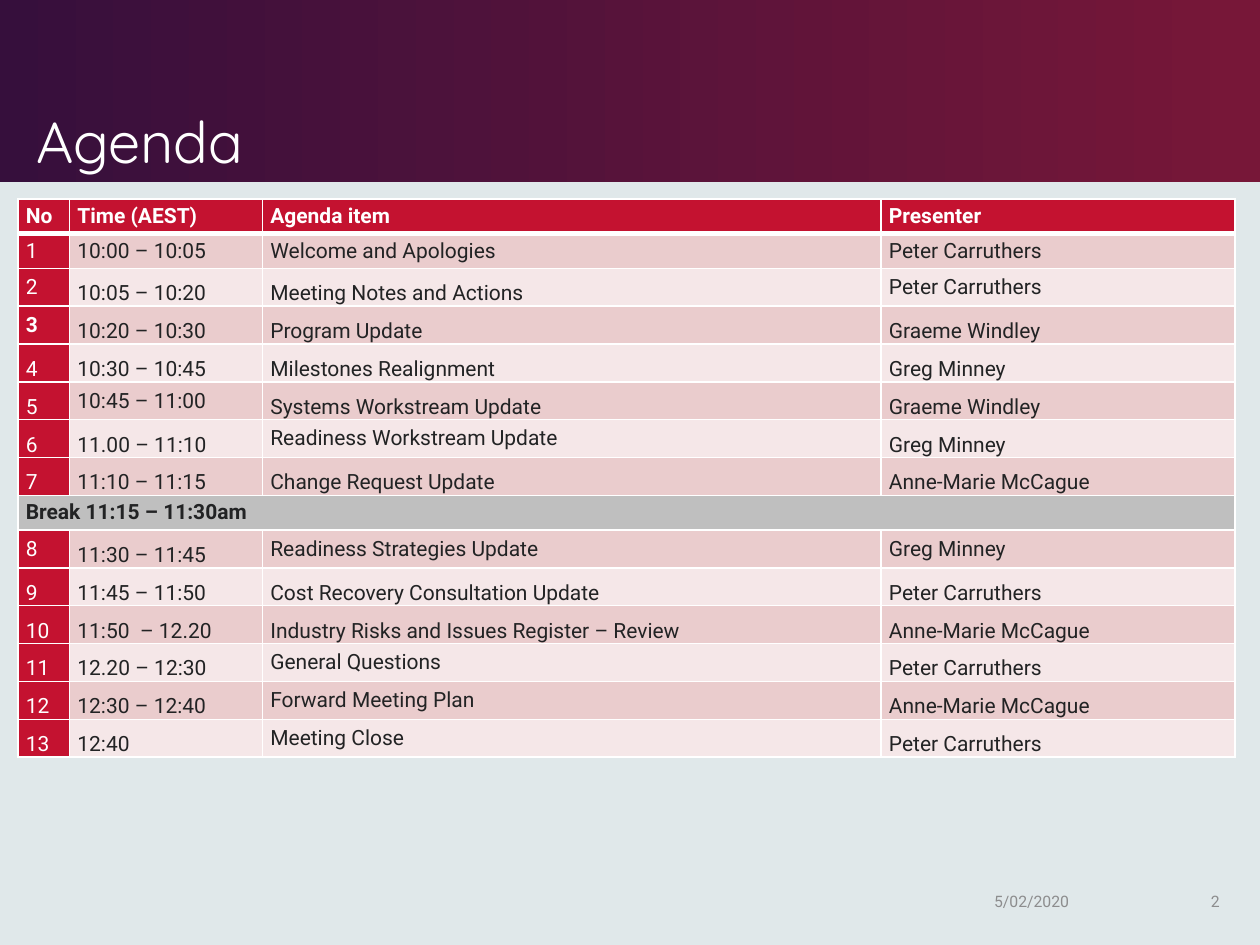
"""Build the agenda slide with its timetable."""
from dataclasses import dataclass

from lxml.etree import SubElement
from pptx import Presentation
from pptx.dml.color import RGBColor
from pptx.enum.shapes import MSO_SHAPE
from pptx.enum.text import MSO_ANCHOR, MSO_AUTO_SIZE, PP_ALIGN
from pptx.oxml.ns import qn
from pptx.util import Cm, Pt

WIDTH, HEIGHT = 25.4, 19.05
ROW_HEIGHT = 0.7
COLUMNS = (1.04, 3.89, 12.47, 7.14)
NO, TIME, ITEM, PRESENTER = range(4)
HEADER = ("No", "Time (AEST)", "Agenda item", "Presenter")
BREAK = "Break 11:15 – 11:30am"
BREAK_ROW = 8
BOLD_NUMBER = "3"
MORNING = (
    ("10:00 – 10:05", "Welcome and Apologies", "Peter Carruthers"),
    ("10:05 – 10:20", "Meeting Notes and Actions", "Peter Carruthers"),
    ("10:20 – 10:30", "Program Update", "Graeme Windley"),
    ("10:30 – 10:45", "Milestones Realignment", "Greg Minney"),
    ("10:45 – 11:00", "Systems Workstream Update", "Graeme Windley"),
    ("11.00 – 11:10", "Readiness Workstream Update", "Greg Minney"),
    ("11:10 – 11:15", "Change Request Update", "Anne-Marie McCague"),
)
LATE = (
    ("11:30 – 11:45", "Readiness Strategies Update", "Greg Minney"),
    ("11:45 – 11:50", "Cost Recovery Consultation Update", "Peter Carruthers"),
    ("11:50  – 12.20", "Industry Risks and Issues Register – Review", "Anne-Marie McCague"),
    ("12.20 – 12:30", "General Questions", "Peter Carruthers"),
    ("12:30 – 12:40", "Forward Meeting Plan", "Anne-Marie McCague"),
    ("12:40", "Meeting Close", "Peter Carruthers"),
)
SINGLE_SPACED = {
    1: (NO, TIME, ITEM, PRESENTER),
    2: (NO, PRESENTER),
    3: (NO,),
    5: (TIME,),
    6: (ITEM,),
    8: (NO, ITEM, PRESENTER),
    11: (ITEM,),
    12: (ITEM,),
    13: (ITEM,),
}


@dataclass(frozen=True)
class Theme:
    """Colours, fonts and type sizes of the slide."""
    back: str = "E0E8EA"
    band_start: str = "360F3C"
    band_end: str = "771738"
    accent: str = "C41230"
    odd: str = "EACCCD"
    even: str = "F5E7E8"
    pause: str = "BFBFBF"
    light: str = "FFFFFF"
    dark: str = "222324"
    muted: str = "8D8D8E"
    head_font: str = "Quicksand"
    body_font: str = "Roboto"
    title_size: float = 33
    table_size: float = 12
    footer_size: float = 9


class Deck:
    """Holds the theme and the current slide."""

    def __init__(self, theme):
        self.theme = theme
        self.prs = Presentation()
        self.prs.slide_width, self.prs.slide_height = Cm(WIDTH), Cm(HEIGHT)
        self.s = self.prs.slides.add_slide(self.prs.slide_layouts[5])
        fill = self.s.background.fill
        fill.solid()
        fill.fore_color.rgb = RGBColor.from_string(theme.back)

    def add_text(self, tf, text, size, color, font=None, bold=False, spacing=1.0, align=PP_ALIGN.LEFT):
        """Put one formatted run in a text frame."""
        p = tf.paragraphs[0]
        p.alignment, p.line_spacing = align, spacing
        r = p.add_run()
        r.text = text
        r.font.name, r.font.size, r.font.bold = font or self.theme.body_font, Pt(size), bold
        r.font.color.rgb = RGBColor.from_string(color)

    def band(self, height):
        """Draw the gradient band behind the title."""
        sp = self.s.shapes.add_shape(MSO_SHAPE.RECTANGLE, 0, 0, Cm(WIDTH), Cm(height))
        sp.shadow.inherit = False
        sp.line.fill.background()
        sp.fill.gradient()
        sp.fill.gradient_angle = 0
        ends = ((0, self.theme.band_start), (0.99, self.theme.band_end))
        for stop, (position, color) in zip(sp.fill.gradient_stops, ends):
            stop.position = position
            stop.color.rgb = RGBColor.from_string(color)
        self.s.shapes.title.element.addprevious(sp.element)

    def title(self, text, left, top, width, height):
        """Place and fill the title placeholder."""
        sp = self.s.shapes.title
        sp.left, sp.top, sp.width, sp.height = map(Cm, (left, top, width, height))
        tf = sp.text_frame
        tf.auto_size, tf.vertical_anchor = MSO_AUTO_SIZE.NONE, MSO_ANCHOR.BOTTOM
        self.add_text(tf, text, self.theme.title_size, self.theme.light,
                      font=self.theme.head_font, spacing=0.9)

    def footer(self, text, left, width, align=PP_ALIGN.LEFT):
        """Add a small text box on the footer line."""
        tf = self.s.shapes.add_textbox(Cm(left), Cm(17.65), Cm(width), Cm(1.02)).text_frame
        tf.word_wrap, tf.vertical_anchor = True, MSO_ANCHOR.MIDDLE
        self.add_text(tf, text, self.theme.footer_size, self.theme.muted, align=align)

    def borders(self, cell, top, bottom):
        """Give a cell light borders of the given widths in points."""
        tc_pr = cell._tc.get_or_add_tcPr()
        for side, width in (("L", 1), ("R", 1), ("T", top), ("B", bottom)):
            ln = SubElement(tc_pr, qn(f"a:ln{side}"), w=str(Pt(width)))
            SubElement(SubElement(ln, qn("a:solidFill")), qn("a:srgbClr"), val=self.theme.light)

    def cell(self, cell, text, fill, color, bold=False, spacing=1.0, top=1, bottom=1):
        """Format one table cell and add its text."""
        self.borders(cell, top, bottom)
        cell.fill.solid()
        cell.fill.fore_color.rgb = RGBColor.from_string(fill)
        cell.margin_left = cell.margin_right = Cm(0.16)
        cell.margin_top = cell.margin_bottom = 0
        cell.vertical_anchor = MSO_ANCHOR.MIDDLE
        if text:
            self.add_text(cell.text_frame, text, self.theme.table_size, color, bold=bold, spacing=spacing)

    def agenda(self, left, top):
        """Build the timetable with its header and break row."""
        t = self.theme
        items = [(str(n), *item) for n, item in enumerate(MORNING + LATE, 1)]
        rows = len(items) + 2
        table = self.s.shapes.add_table(rows, len(COLUMNS), Cm(left), Cm(top),
                                        Cm(sum(COLUMNS)), Cm(rows * ROW_HEIGHT)).table
        table.horz_banding = False
        for column, width in zip(table.columns, COLUMNS):
            column.width = Cm(width)
        for row in table.rows:
            row.height = Cm(ROW_HEIGHT)

        for c, text in enumerate(HEADER):
            self.cell(table.cell(0, c), text, t.accent, t.light, bold=True, bottom=3)
            self.cell(table.cell(BREAK_ROW, c), "" if c else BREAK, t.pause, t.dark, bold=True)
        table.cell(BREAK_ROW, 0).merge(table.cell(BREAK_ROW, len(COLUMNS) - 1))

        for n, item in enumerate(items, 1):
            row = n if n < BREAK_ROW else n + 1
            shade = t.odd if row % 2 else t.even
            for c, text in enumerate(item):
                fill, color = (t.accent, t.light) if c == NO else (shade, t.dark)
                self.cell(table.cell(row, c), text, fill, color,
                          bold=text == BOLD_NUMBER,
                          spacing=1.0 if c in SINGLE_SPACED.get(n, ()) else 1.5,
                          top=3 if row == 1 else 1)


def main():
    """Compose the slide and save it."""
    deck = Deck(Theme())
    deck.band(3.68)
    deck.title("Agenda", 0.48, 0.38, 18.75, 3.3)
    deck.footer("2", 23.65, 1.19, PP_ALIGN.RIGHT)
    deck.agenda(0.36, 4.01)
    deck.footer("5/02/2020", 19.79, 3.61)
    deck.prs.save("out.pptx")


if __name__ == "__main__":
    main()
